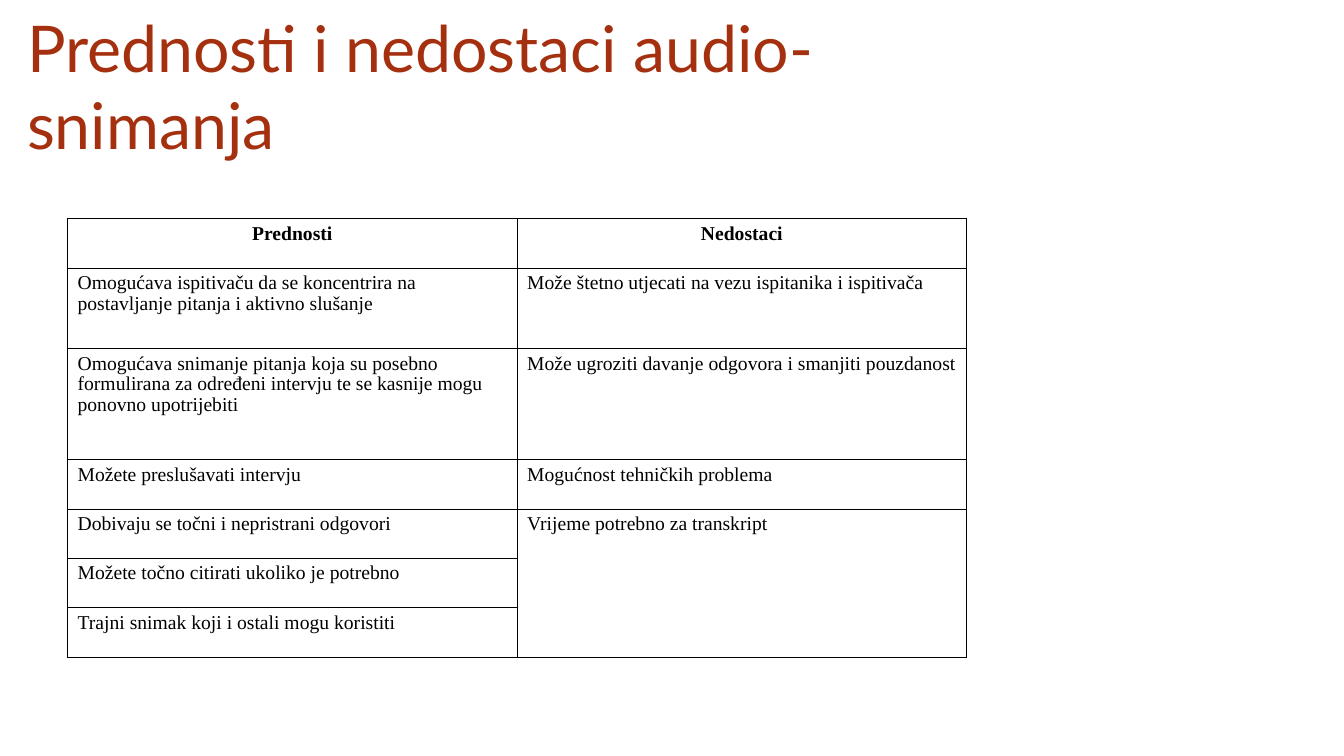
from lxml.etree import SubElement
from pptx import Presentation
from pptx.dml.color import RGBColor
from pptx.enum.text import MSO_ANCHOR, PP_ALIGN
from pptx.oxml.ns import qn
from pptx.util import Pt

RUST = RGBColor(0xA5, 0x30, 0x0F)
BLACK = RGBColor(0, 0, 0)
TITLE = "Prednosti i nedostaci audio-snimanja"
ROWS = [
    ("Prednosti", "Nedostaci"),
    ("Omogućava ispitivaču da se koncentrira na postavljanje pitanja i aktivno slušanje",
     "Može štetno utjecati na vezu ispitanika i ispitivača"),
    ("Omogućava snimanje pitanja koja su posebno formulirana za određeni intervju "
     "te se kasnije mogu ponovno upotrijebiti",
     "Može ugroziti davanje odgovora i smanjiti pouzdanost"),
    ("Možete preslušavati intervju", "Mogućnost tehničkih problema"),
    ("Dobivaju se točni i nepristrani odgovori", "Vrijeme potrebno za transkript"),
    ("Možete točno citirati ukoliko je potrebno", ""),
    ("Trajni snimak koji i ostali mogu koristiti", ""),
]
SHORT_ROW = 35.28
ROW_HEIGHTS = [SHORT_ROW, 57.6, 79.2] + [SHORT_ROW] * 4
MERGE_START = 4


def add_run(para, text, font, size, color, bold=False):
    span = para.add_run()
    span.text = text
    span.font.name = font
    span.font.size = Pt(size)
    span.font.bold = bold
    span.font.color.rgb = color


def add_title(page, left, top, width, height):
    box = page.shapes.add_textbox(Pt(left), Pt(top), Pt(width), Pt(height))
    frame = box.text_frame
    frame.word_wrap = True
    frame.vertical_anchor = MSO_ANCHOR.BOTTOM
    add_run(frame.paragraphs[0], TITLE, "Lato", 46, RUST)


def style_cell(cell):
    # Thin black borders on all four sides, no fill
    properties = cell._tc.get_or_add_tcPr()
    for side in ("a:lnL", "a:lnR", "a:lnT", "a:lnB"):
        line = SubElement(properties, qn(side), w=str(Pt(0.45)))
        fill = SubElement(line, qn("a:solidFill"))
        SubElement(fill, qn("a:srgbClr"), val=str(BLACK))
    cell.fill.background()


def add_comparison(page, left, top, width):
    frame = page.shapes.add_table(len(ROWS), 2, Pt(left), Pt(top),
                                  Pt(width), Pt(sum(ROW_HEIGHTS)))
    table = frame.table
    table.first_row = False
    table.horz_banding = False
    for column in table.columns:
        column.width = Pt(width / 2)

    for row_index, (texts, height) in enumerate(zip(ROWS, ROW_HEIGHTS)):
        table.rows[row_index].height = Pt(height)
        is_header = row_index == 0
        for column_index, text in enumerate(texts):
            cell = table.cell(row_index, column_index)
            style_cell(cell)
            if text:
                para = cell.text_frame.paragraphs[0]
                para.alignment = PP_ALIGN.CENTER if is_header else PP_ALIGN.LEFT
                para.line_spacing = 0.95
                add_run(para, text, "Times New Roman", 14, BLACK, is_header)

    # The last drawback spans the remaining rows
    table.cell(MERGE_START, 1).merge(table.cell(len(ROWS) - 1, 1))


def main():
    deck = Presentation()
    deck.slide_width, deck.slide_height = Pt(960), Pt(540)
    page = deck.slides.add_slide(deck.slide_layouts[6])
    add_title(page, 12.24, 22.32, 684, 97.2)
    add_comparison(page, 48.24, 156.24, 642.24)
    deck.save("out.pptx")


if __name__ == "__main__":
    main()
